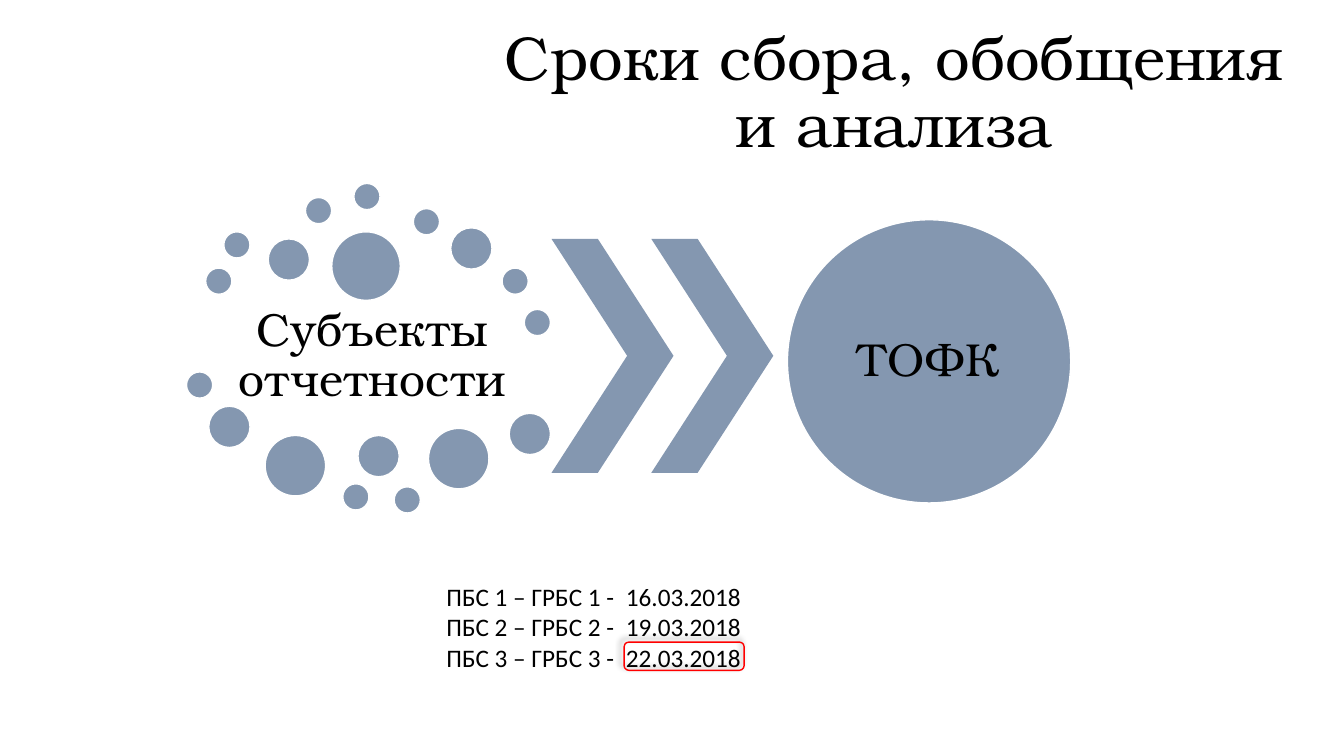
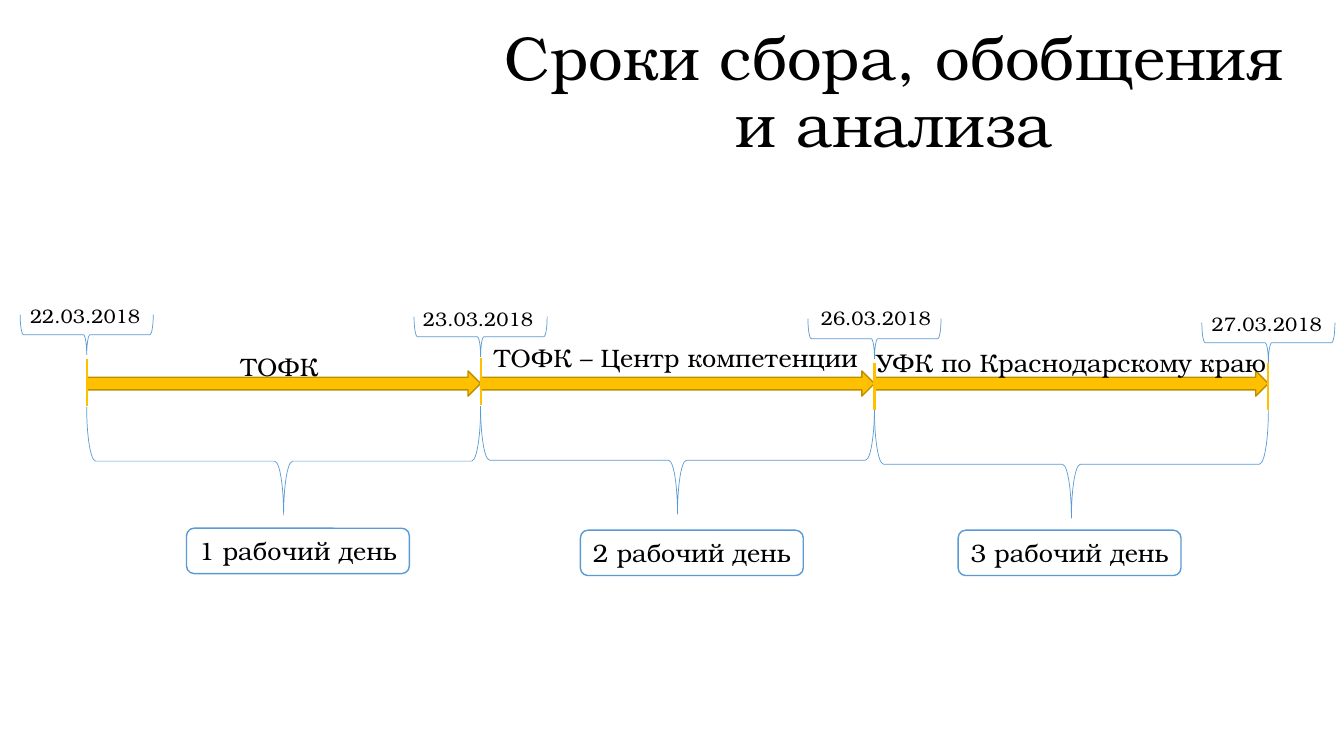
from lxml import etree
from pptx import Presentation
from pptx import util as u
from pptx.dml.color import RGBColor
from pptx.enum import shapes, text
from pptx.oxml.ns import qn

PX = 9144
SERIF, SANS = "TeX Gyre Bonum", "Calibri"
BLACK, WHITE, RED = "000000", "FFFFFF", "FF0000"
SLATE, GOLD, DARK_GOLD, BLUE = "8497B0", "FFC000", "BD8E00", "5B9BD5"
KIND = shapes.MSO_SHAPE
CENTER, LEFT = text.PP_ALIGN.CENTER, text.PP_ALIGN.LEFT
MIDDLE, TOP = text.MSO_ANCHOR.MIDDLE, text.MSO_ANCHOR.TOP
TITLE = "Сроки сбора, обобщения и анализа"


def px(value):
    return u.Emu(round(value * PX))


def color(value):
    return RGBColor.from_string(value)


def write(shape, words, size, font=SERIF, align=CENTER, anchor=TOP,
          spacing=1.0, wrap=True, inset=None):
    frame = shape.text_frame
    frame.word_wrap = wrap
    frame.vertical_anchor = anchor
    if inset is not None:
        frame.margin_left = frame.margin_right = px(inset)
        frame.margin_top = frame.margin_bottom = px(inset)
    frame.text = words
    for para in frame.paragraphs:
        para.alignment = align
        para.line_spacing = spacing
        for span in para.runs:
            span.font.size = u.Pt(size)
            span.font.name = font
            span.font.color.rgb = color(BLACK)
    return frame


def add_text(page, box, words, size, **style):
    label = page.shapes.add_textbox(*map(px, box))
    return write(label, words, size, **style)


def add_shape(page, kind, box, fill=None, line=None, weight=1):
    shape = page.shapes.add_shape(kind, *map(px, box))
    shape.shadow.inherit = False
    if fill:
        shape.fill.solid()
        shape.fill.fore_color.rgb = color(fill)
    else:
        shape.fill.background()
    if line:
        shape.line.color.rgb = color(line)
        shape.line.width = u.Pt(weight)
    else:
        shape.line.fill.background()
    return shape


def add_brace(page, box):
    left, top, width, height = box
    turned = (left + (width - height) / 2, top + (height - width) / 2, height, width)
    add_shape(page, KIND.LEFT_BRACE, turned, line=BLUE, weight=0.5).rotation = 270


def add_tick(page, x, top, height):
    tick = page.shapes.add_connector(
        shapes.MSO_CONNECTOR.STRAIGHT, px(x), px(top), px(x), px(top + height))
    tick.line.color.rgb = color(GOLD)
    tick.line.width = u.Pt(1.5)
    etree.SubElement(tick._element.spPr, qn("a:effectLst"))


def add_outer_shadow(shape):
    effects = shape._element.spPr.find(qn("a:effectLst"))
    shadow = etree.SubElement(effects, qn("a:outerShdw"), blurRad=str(u.Pt(4)),
                              dist=str(u.Pt(3)), dir="13500000", algn="br", rotWithShape="0")
    shade = etree.SubElement(shadow, qn("a:srgbClr"), val=BLACK)
    etree.SubElement(shade, qn("a:alpha"), val="40000")


def add_page(deck):
    page = deck.slides.add_slide(deck.slide_layouts[6])
    add_text(page, (466, 64, 842, 59), TITLE, 44, anchor=MIDDLE, spacing=0.9)
    return page


def add_reporters(page, box):
    left, top, width, height = box
    dots = {
        26: [(19, 84), (37, 48), (118, 14), (166, 0), (225, 25), (313, 84),
             (335, 125), (0, 187), (155, 298), (206, 301)],
        41: [(81, 55), (262, 44), (22, 221), (170, 250), (320, 228)],
        60: [(78, 250), (240, 243)],
        68: [(144, 48)],
    }
    for size, places in dots.items():
        for x, y in places:
            add_shape(page, KIND.OVAL, (left + x, top + y, size, size), SLATE, WHITE)
    add_text(page, (left + 19, top + 117, width - 30, 109), "Субъекты отчетности", 33,
             anchor=MIDDLE, spacing=0.9, inset=5)


def add_chevrons(page, box):
    left, top, width, height = box
    size = 121
    for x in (left, left + width - size):
        chevron = add_shape(page, KIND.CHEVRON, (x, top, size, height), SLATE)
        chevron.adjustments[0] = 0.62


def add_receiver(page, box):
    circle = add_shape(page, KIND.OVAL, box, SLATE, WHITE)
    write(circle, "ТОФК", 33, anchor=MIDDLE, spacing=0.9, inset=0)


def add_deadlines(page, box):
    left, top, width, height = box
    frame_box = (left + 186, top + 65, 119, 28)
    add_outer_shadow(add_shape(page, KIND.ROUNDED_RECTANGLE, frame_box, line=RED))
    dates = ["16.03.2018", "19.03.2018", "22.03.2018"]
    lines = [f"ПБС {i} – ГРБС {i} -\t{date}" for i, date in enumerate(dates, 1)]
    frame = add_text(page, box, "\n".join(lines), 18, font=SANS, align=LEFT)
    for para in frame.paragraphs:
        tabs = etree.SubElement(para._p.get_or_add_pPr(), qn("a:tabLst"))
        etree.SubElement(tabs, qn("a:tab"), pos=str(px(178)), algn="l")


def add_stage(page, box, number, name, label_box, brace_top, day_box):
    left, top, width, height = box
    add_shape(page, KIND.RIGHT_ARROW, box, GOLD, DARK_GOLD)
    add_brace(page, (left, top + brace_top, width, 107))
    x, y, label_width = label_box
    add_text(page, (left + x, top + y, label_width, 40), name, 18)
    x, y = day_box
    day = add_shape(page, KIND.ROUNDED_RECTANGLE, (left + x, top + y, 221, 45), WHITE, BLUE)
    write(day, f"{number} рабочий день", 18, anchor=MIDDLE, wrap=False)


def add_milestone(page, x, top, date, tick_top, brace_top, date_left, date_top):
    add_tick(page, x, top + tick_top, 47)
    add_brace(page, (x - 66, top + brace_top, 132, 40))
    add_text(page, (x + date_left, top + date_top, 146, 34), date, 14, align=LEFT)


def add_timeline(page, box):
    left, top, width, height = box
    stages = [
        ("ТОФК", (79, -24, 225), 36, (99, 156)),
        ("ТОФК – Центр компетенции", (-12, -33, 412), 35, (99, 158)),
        ("УФК по Краснодарскому краю", (-13, -28, 416), 39, (83, 158)),
    ]
    milestones = [
        ("22.03.2018", -12, -56, -66, -71),
        ("23.03.2018", -13, -54, -67, -68),
        ("26.03.2018", -8, -52, -63, -69),
        ("27.03.2018", -8, -48, -66, -63),
    ]
    step = width / len(stages)
    for i, stage in enumerate(stages):
        add_stage(page, (left + i * step, top, step, height), i + 1, *stage)
    for i, milestone in enumerate(milestones):
        add_milestone(page, left + i * step, top, *milestone)


def main():
    deck = Presentation()
    deck.slide_width, deck.slide_height = px(1333), px(750)

    page = add_page(deck)
    add_reporters(page, (185, 182, 361, 327))
    add_chevrons(page, (547, 237, 220, 232))
    add_receiver(page, (781, 218, 281, 281))
    add_deadlines(page, (433, 572, 457, 131))

    page = add_page(deck)
    add_timeline(page, (86, 368, 1172, 25))

    deck.save("out.pptx")


if __name__ == "__main__":
    main()
